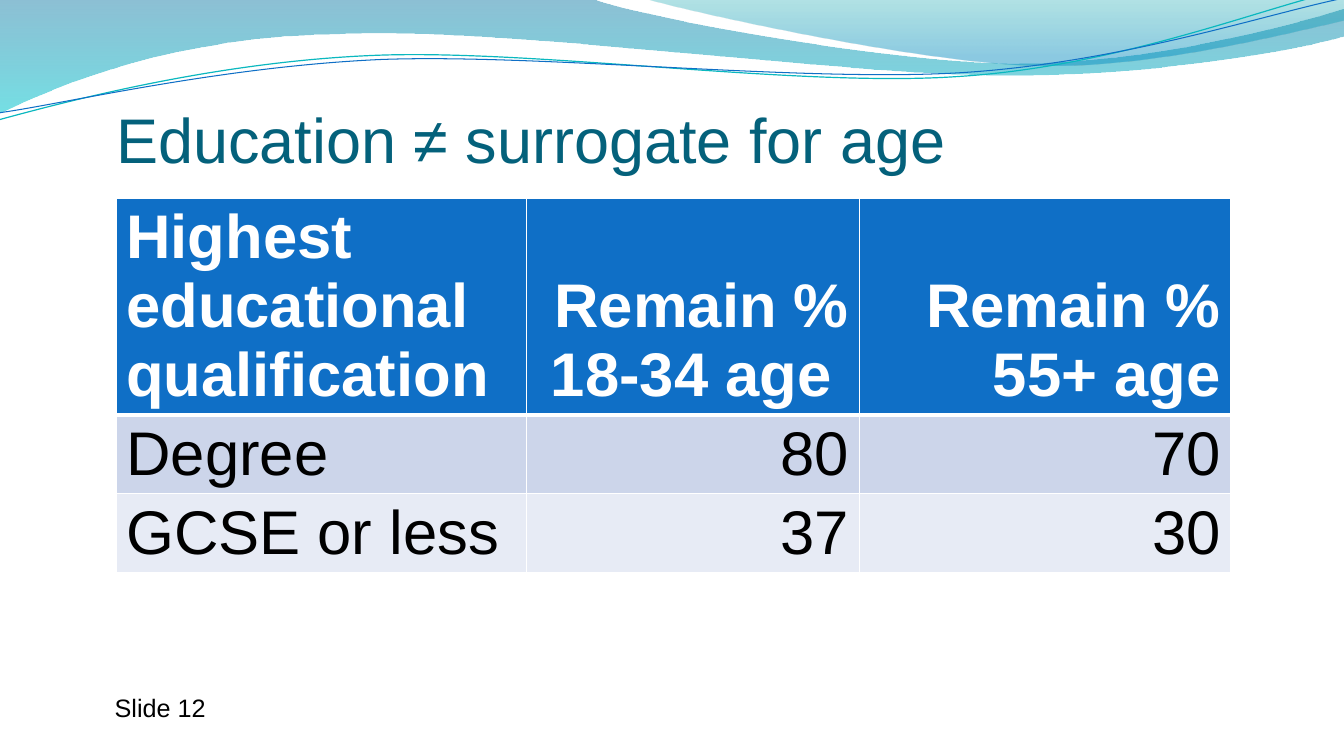
from lxml import etree
from pptx import Presentation
from pptx import util as u
from pptx.dml.color import RGBColor
from pptx.enum import text
from pptx.oxml import ns

HUES = {"ink": "000000", "white": "FFFFFF", "title": "04617B", "blue": "0F6FC6",
        "teal": "0AB8BF", "deep": "0074A1", "aqua": "00C6CF", "sea": "00A1A9",
        "sky": "008BBF", "odd": "CCD5EA", "even": "E7EBF5"}

# Outlines in cm: a start point, then lines (2 numbers) and curves (6 numbers)
WAVE = [(0, 0), (14.91, -0.03),
        (16.1, 0.43, 22.48, 1.6, 25.68, 1.6), (28.91, 1.6, 32.46, 0.66, 33.86, 0.23),
        (33.91, 0.91),
        (33.3, 1.12, 29.46, 1.93, 25.25, 1.9), (21.06, 1.9, 12.93, 0.71, 8.71, 0.86),
        (4.37, 0.91, 1.55, 2.11, -0.03, 2.87)]
CREST = [(16.23, -0.03),
         (17.25, 0.28, 23.09, 1.57, 26.04, 1.65), (28.98, 1.75, 32.56, 0.81, 33.86, 0.53),
         (33.86, 0)]
TEAL = [(-0.03, 3.02), (1.63, 2.57, 5.36, 1.57, 9.37, 1.4),
        (13.39, 1.22, 20.07, 2.21, 24.13, 1.93), (28.19, 1.68, 31.8, 0.2, 33.81, -0.25)]
BLUE = [(0, 2.84), (1.6, 2.62, 5.54, 1.68, 9.6, 1.5),
        (13.64, 1.35, 20.22, 2.08, 24.26, 1.83), (28.32, 1.57, 31.88, 0.36, 33.88, -0.05)]
ROWS = [("Highest educational qualification", "Remain % 18-34 age ", "Remain % 55+ age"),
        ("Degree", "80", "70"),
        ("GCSE or less", "37", "30")]


def rgb(hue):
    return RGBColor.from_string(HUES[hue])


def write(frame, words, size=18, hue="ink", bold=False, right=False, font="Arial"):
    para = frame.paragraphs[0]
    para.alignment = text.PP_ALIGN.RIGHT if right else text.PP_ALIGN.LEFT
    run = para.add_run()
    run.text = words
    run.font.name, run.font.size, run.font.bold = font, u.Pt(size), bold
    run.font.color.rgb = rgb(hue)


class Page:
    def __init__(self, deck):
        self.back = deck.slide_master.shapes.element
        self.slide = deck.slides.add_slide(deck.slide_layouts[5])
        self.shapes = self.slide.shapes
        self.count = 0

    def outline(self, path, closed):
        """Draw a path of lines and cubic curves on the master."""
        first, *rest = [(u.Cm(seg[i]), u.Cm(seg[i + 1]))
                        for seg in path for i in range(0, len(seg), 2)]
        pen = self.shapes.build_freeform(*first)
        pen.add_line_segments(rest, close=closed)
        shape = pen.convert_to_shape()
        shape.shadow.inherit = False

        # Join the three points of each curve
        lines = iter(list(shape.element.iter(ns.qn("a:lnTo"))))
        for seg in path[1:]:
            line = next(lines)
            if len(seg) == 6:
                line.tag = ns.qn("a:cubicBezTo")
                for _ in range(2):
                    more = next(lines)
                    line.append(more[0])
                    more.getparent().remove(more)

        # Keep the master's own placeholders in front
        shape.element.nvSpPr.cNvPr.set("id", str(100 + self.count))
        self.back.insert(2 + self.count, shape.element)
        self.count += 1
        return shape

    def wave(self, path, *stops):
        shape = self.outline(path, True)
        shape.line.fill.background()
        shape.fill.gradient()
        shape.fill.gradient_angle = 270
        for stop, (pos, hue, _) in zip(shape.fill.gradient_stops, stops):
            stop.position, stop.color.rgb = pos, rgb(hue)
        marks = shape.element.spPr.iter(ns.qn("a:srgbClr"))
        for mark, (_, _, alpha) in zip(marks, stops):
            etree.SubElement(mark, ns.qn("a:alpha"), val=str(alpha * 1000))

    def curve(self, path, hue, width):
        shape = self.outline(path, False)
        shape.fill.background()
        shape.line.color.rgb, shape.line.width = rgb(hue), u.Pt(width)

    def title(self, words, left, top, width, height):
        box = self.shapes.title
        box.left, box.top, box.width, box.height = map(u.Cm, (left, top, width, height))
        frame = box.text_frame
        frame.auto_size = text.MSO_AUTO_SIZE.NONE
        frame.vertical_anchor = text.MSO_ANCHOR.BOTTOM
        frame.margin_left = frame.margin_right = frame.margin_bottom = 0
        frame.margin_top = u.Cm(0.13)
        write(frame, words, size=45, hue="title")

    def label(self, words, left, top, width, height):
        frame = self.shapes.add_textbox(*map(u.Cm, (left, top, width, height))).text_frame
        frame.word_wrap = True
        frame.auto_size = text.MSO_AUTO_SIZE.SHAPE_TO_FIT_TEXT
        write(frame, words)

    def edges(self, cell):
        props = cell._tc.get_or_add_tcPr()
        for i, (side, width) in enumerate(zip("LRTB", (1, 1, 1, 3))):
            line = etree.Element(ns.qn("a:ln" + side), w=str(u.Pt(width)))
            fill = etree.SubElement(line, ns.qn("a:solidFill"))
            etree.SubElement(fill, ns.qn("a:srgbClr"), val=HUES["white"])
            props.insert(i, line)

    def table(self, rows, left, top, widths, height, least):
        """Rows start at the least height and grow with their text."""
        frame = self.shapes.add_table(len(rows), len(widths), *map(
            u.Cm, (left, top, sum(widths), height)))
        grid = frame.table
        for col, width in zip(grid.columns, widths):
            col.width = u.Cm(width)
        for r, row in enumerate(rows):
            grid.rows[r].height = u.Cm(least)
            head = r == 0
            for c, words in enumerate(row):
                cell = grid.cell(r, c)
                cell.fill.solid()
                cell.fill.fore_color.rgb = rgb(("blue", "odd", "even")[r])
                if head:
                    self.edges(cell)
                    if c:
                        cell.vertical_anchor = text.MSO_ANCHOR.BOTTOM
                write(cell.text_frame, words, size=44, bold=head, right=c > 0,
                      hue="white" if head else "ink")
        frame.height = u.Cm(height)


def main():
    deck = Presentation()
    deck.slide_width, deck.slide_height = u.Cm(33.87), u.Cm(19.05)
    page = Page(deck)

    # Waves along the top
    page.wave(WAVE, (0, "deep", 45), (1, "aqua", 55))
    page.wave(CREST, (0, "sea", 30), (0.8, "sky", 45))
    page.curve(TEAL, "teal", 0.85)
    page.curve(BLUE, "blue", 0.75)

    # Title, table and slide number
    page.title("Education ≠ surrogate for age", 2.93, 2.24, 30.48, 2.21)
    page.table(ROWS, 2.93, 4.99, (10.34, 8.38, 9.37), 10.08, 1.04)
    page.label("Slide 12", 2.64, 17.32, 3, 1.02)

    deck.save("out.pptx")


if __name__ == "__main__":
    main()
